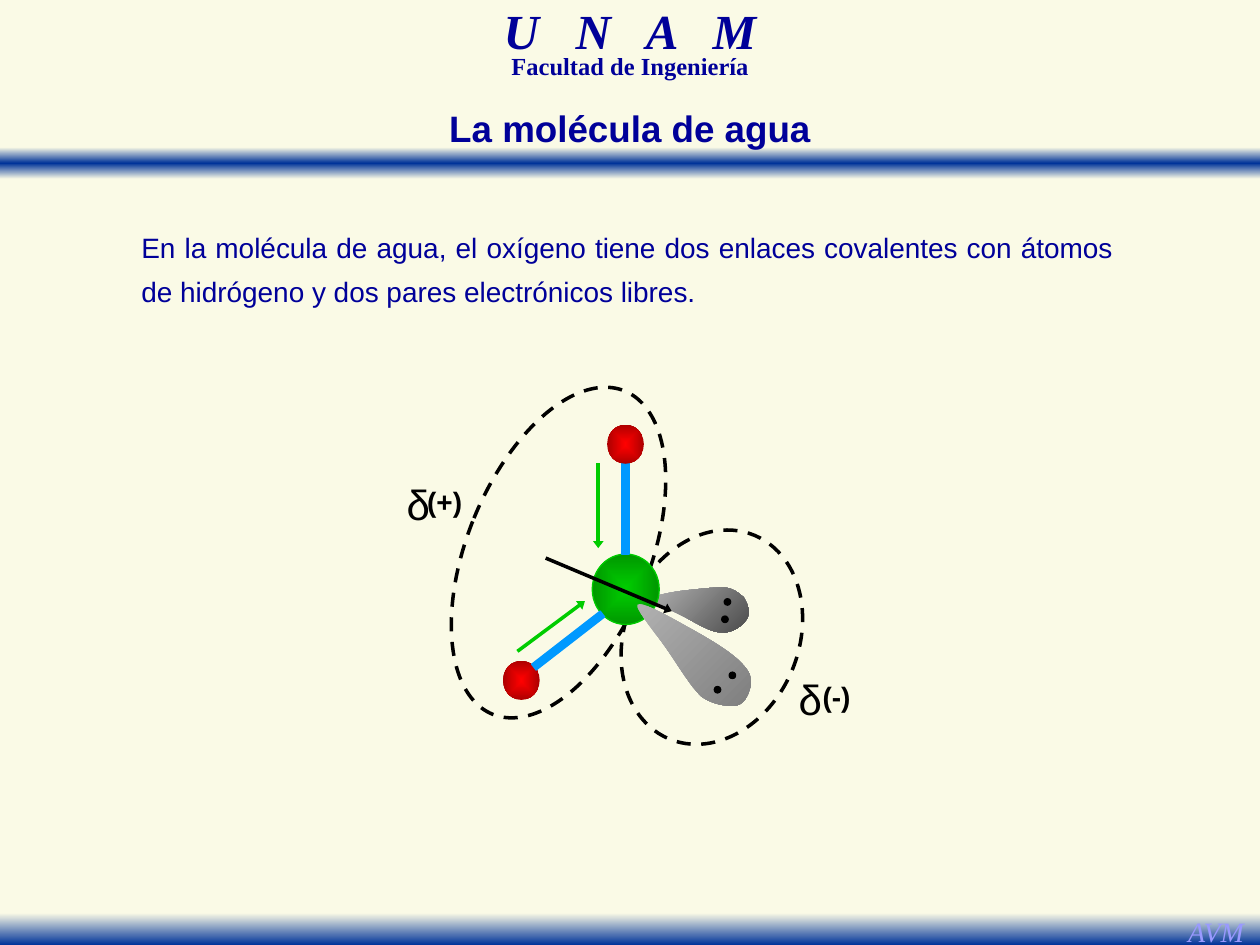
from lxml import etree
from pptx import Presentation
from pptx.dml.color import RGBColor
from pptx.enum.dml import MSO_LINE
from pptx.enum.shapes import MSO_CONNECTOR, MSO_SHAPE
from pptx.enum.text import PP_ALIGN
from pptx.oxml import parse_xml
from pptx.oxml.ns import nsdecls, qn
from pptx.util import Cm, Pt

RECTANGLE, OVAL = MSO_SHAPE.RECTANGLE, MSO_SHAPE.OVAL
STRAIGHT, DASH = MSO_CONNECTOR.STRAIGHT, MSO_LINE.DASH
CENTER, JUSTIFY = PP_ALIGN.CENTER, PP_ALIGN.JUSTIFY

CREAM, BLUE, NAVY, LILAC = "FAFAE6", "003399", "000099", "9999FF"
BLACK, GREEN, SKY = "000000", "00CC00", "0099FF"
SERIF, SANS = "Times New Roman", "Arial"

BARS = [((0, 2.97, 25.4, 0.64), [CREAM, BLUE, CREAM]),
        ((0, 18.41, 25.4, 0.64), [CREAM, BLUE])]
POLES = [((9.42, 7.62, 3.68, 7.04), 22.2), ((12.6, 10.62, 3.5, 4.45), 22.9)]
OXYGEN = (11.94, 11.17, 1.35, 1.42)
UPPER_BOND, LOWER_BOND = (12.53, 9.32, 0.15, 1.85), (11.38, 12.04, 0.15, 1.75)
UPPER_HYDROGEN, LOWER_HYDROGEN = (12.24, 8.56, 0.74, 0.79), (10.14, 13.32, 0.74, 0.79)
ARROWS = [((12.06, 9.34), (12.06, 11.05), GREEN),
          ((10.43, 13.13), (11.79, 12.12), GREEN),
          ((11, 11.25), (13.54, 12.32), BLACK)]

BACK_LOBE = {
    "start": (14.58, 11.84),
    "curves": [((14.78, 11.86), (14.88, 11.94), (14.99, 12.04)),
               ((15.06, 12.14), (15.14, 12.34), (15.06, 12.47)),
               ((14.99, 12.6), (14.76, 12.78), (14.53, 12.75)),
               ((14.3, 12.75), (13.89, 12.47), (13.67, 12.37)),
               ((13.41, 12.24), (13.08, 12.14), (13.13, 12.07)),
               ((13.18, 11.99), (13.69, 11.91), (13.94, 11.89)),
               ((14.2, 11.86), (14.45, 11.84), (14.58, 11.84))],
    "colors": ["B2B2B2", "494949"],
    "electrons": [(14.6, 12.07), (14.55, 12.42)],
}
FRONT_LOBE = {
    "start": (14.94, 13.36),
    "curves": [((15.14, 13.56), (15.14, 13.67), (15.14, 13.79)),
               ((15.11, 13.94), (15.04, 14.17), (14.86, 14.22)),
               ((14.71, 14.25), (14.4, 14.22), (14.15, 14.05)),
               ((13.92, 13.84), (13.64, 13.36), (13.44, 13.08)),
               ((13.21, 12.75), (12.8, 12.27), (12.85, 12.19)),
               ((12.93, 12.12), (13.44, 12.4), (13.79, 12.6)),
               ((14.12, 12.78), (14.71, 13.11), (14.94, 13.36))],
    "colors": ["B2B2B2", "7F7F7F"],
    "electrons": [(14.4, 13.84), (14.7, 13.55)],
}

BODY = ("En la molécula de agua, el oxígeno tiene dos enlaces covalentes con átomos "
        "de hidrógeno y dos pares electrónicos libres.")
CHARGES = [((15.8, 13.46), "(-)"), ((7.9, 9.52), "(+)")]


def rgb(color):
    """Turn a hex string into a colour."""
    return RGBColor.from_string(color)


def fill_gradient(shape, colors, angle=None):
    """Fill with evenly spaced stops, along an angle or outward from the centre."""
    last = len(colors) - 1
    stops = "".join(
        f'<a:gs pos="{100000 * index // last}"><a:srgbClr val="{color}"/></a:gs>'
        for index, color in enumerate(colors))
    if angle is None:
        course = ('<a:path path="shape"><a:fillToRect l="50000" t="50000" '
                  'r="50000" b="50000"/></a:path>')
    else:
        course = f'<a:lin ang="{angle * 60000}" scaled="0"/>'
    shape.fill.background()
    properties = shape.element.spPr
    properties.replace(properties.find(qn("a:noFill")), parse_xml(
        f'<a:gradFill {nsdecls("a")} rotWithShape="1">'
        f"<a:gsLst>{stops}</a:gsLst>{course}</a:gradFill>"))


def style_line(shape, color, width):
    """Set the outline, or remove it when there is no colour."""
    if color is None:
        shape.line.fill.background()
    else:
        shape.line.color.rgb = rgb(color)
        shape.line.width = Pt(width)


def add_shape(slide, kind, box, fill=None, line=None, width=0.75, rotation=0):
    """Add a preset shape without shadow."""
    shape = slide.shapes.add_shape(kind, *map(Cm, box))
    shape.shadow.inherit = False
    shape.rotation = rotation
    if fill is None:
        shape.fill.background()
    else:
        shape.fill.solid()
        shape.fill.fore_color.rgb = rgb(fill)
    style_line(shape, line, width)
    return shape


def add_hydrogen(slide, box):
    """Add a hydrogen atom."""
    fill_gradient(add_shape(slide, OVAL, box), ["FF0000", "AD0000"])


def bend_segments(shape):
    """Join every three line segments of a freeform into one Bézier curve."""
    segments = list(shape.element.iter(qn("a:lnTo")))
    for first, second, end in zip(segments[::3], segments[1::3], segments[2::3]):
        curve = etree.Element(qn("a:cubicBezTo"))
        first.addprevious(curve)
        for segment in (first, second, end):
            curve.append(segment[0])
            segment.getparent().remove(segment)


def add_lobe(slide, lobe):
    """Add an orbital lobe with its free electron pair."""
    builder = slide.shapes.build_freeform(*map(Cm, lobe["start"]))
    builder.add_line_segments(
        [tuple(map(Cm, point)) for curve in lobe["curves"] for point in curve], close=True)
    shape = builder.convert_to_shape()
    bend_segments(shape)
    shape.shadow.inherit = False
    fill_gradient(shape, lobe["colors"], 45)
    style_line(shape, None, 0)
    for corner in lobe["electrons"]:
        add_shape(slide, OVAL, (*corner, 0.13, 0.13), BLACK, BLACK)


def add_arrow(slide, start, end, color):
    """Add a straight arrow with a short head."""
    connector = slide.shapes.add_connector(STRAIGHT, *map(Cm, start + end))
    style_line(connector, color, 2)
    properties = connector._element.spPr
    etree.SubElement(properties.find(qn("a:ln")), qn("a:tailEnd"), type="triangle", len="sm")
    etree.SubElement(properties, qn("a:effectLst"))


def add_text(slide, box, text, size, font, color, bold=False, italic=False,
             align=CENTER, spacing=None, indent=0, wrap=True):
    """Add a text box; text is a string or a list of (string, tracking) runs."""
    frame = slide.shapes.add_textbox(*map(Cm, box)).text_frame
    frame.word_wrap = wrap
    paragraph = frame.paragraphs[0]
    paragraph.alignment = align
    paragraph.line_spacing = spacing
    if indent:
        paragraph._p.get_or_add_pPr().set("marL", str(Cm(indent)))
    for content, tracking in [(text, 0)] if isinstance(text, str) else text:
        run = paragraph.add_run()
        run.text = content
        run.font.size, run.font.name = Pt(size), font
        run.font.bold, run.font.italic = bold, italic
        run.font.color.rgb = rgb(color)
        if tracking:
            run._r.get_or_add_rPr().set("spc", str(tracking * 100))


def main():
    """Build the slide on the water molecule."""
    presentation = Presentation()
    presentation.slide_width, presentation.slide_height = Cm(25.4), Cm(19.05)
    slide = presentation.slides.add_slide(presentation.slide_layouts[6])
    slide.background.fill.solid()
    slide.background.fill.fore_color.rgb = rgb(CREAM)

    for box, colors in BARS:
        fill_gradient(add_shape(slide, RECTANGLE, box), colors, 90)
    add_text(slide, (7.72, 0.2, 9.96, 1.09), [("U N A ", 7), ("M", 0)], 28, SERIF, NAVY,
             bold=True, italic=True, spacing=0.7)
    add_text(slide, (8.16, 1.07, 9.09, 0.66), "Facultad de Ingeniería", 14, SERIF, NAVY,
             bold=True, spacing=0.7)
    add_text(slide, (23.64, 18.32, 1.75, 0.94), "AVM", 16, SERIF, LILAC,
             italic=True, wrap=False)

    for box, rotation in POLES:
        pole = add_shape(slide, OVAL, box, None, BLACK, 2, rotation)
        pole.line.dash_style = DASH
    add_lobe(slide, BACK_LOBE)
    add_text(slide, (2.07, 4.32, 20.62, 1.93), BODY, 16, SANS, NAVY,
             align=JUSTIFY, spacing=1.3, indent=0.53)
    fill_gradient(add_shape(slide, OVAL, OXYGEN, line=GREEN), [GREEN, "009700"])
    add_shape(slide, RECTANGLE, UPPER_BOND, SKY, SKY)
    for box in (UPPER_HYDROGEN, LOWER_HYDROGEN):
        add_hydrogen(slide, box)
    add_shape(slide, RECTANGLE, LOWER_BOND, SKY, SKY, rotation=52.2)
    add_lobe(slide, FRONT_LOBE)
    for start, end, color in ARROWS:
        add_arrow(slide, start, end, color)
    for (left, top), sign in CHARGES:
        add_text(slide, (left, top, 1.07, 1.27), "δ", 24, SANS, BLACK)
        add_text(slide, (left + 0.43, top + 0.12, 1.27, 0.94), sign, 16, SANS, BLACK, bold=True)
    add_text(slide, (7.2, 2.01, 11, 1.14), "La molécula de agua", 21, SANS, NAVY, bold=True)

    presentation.save("out.pptx")


if __name__ == "__main__":
    main()
